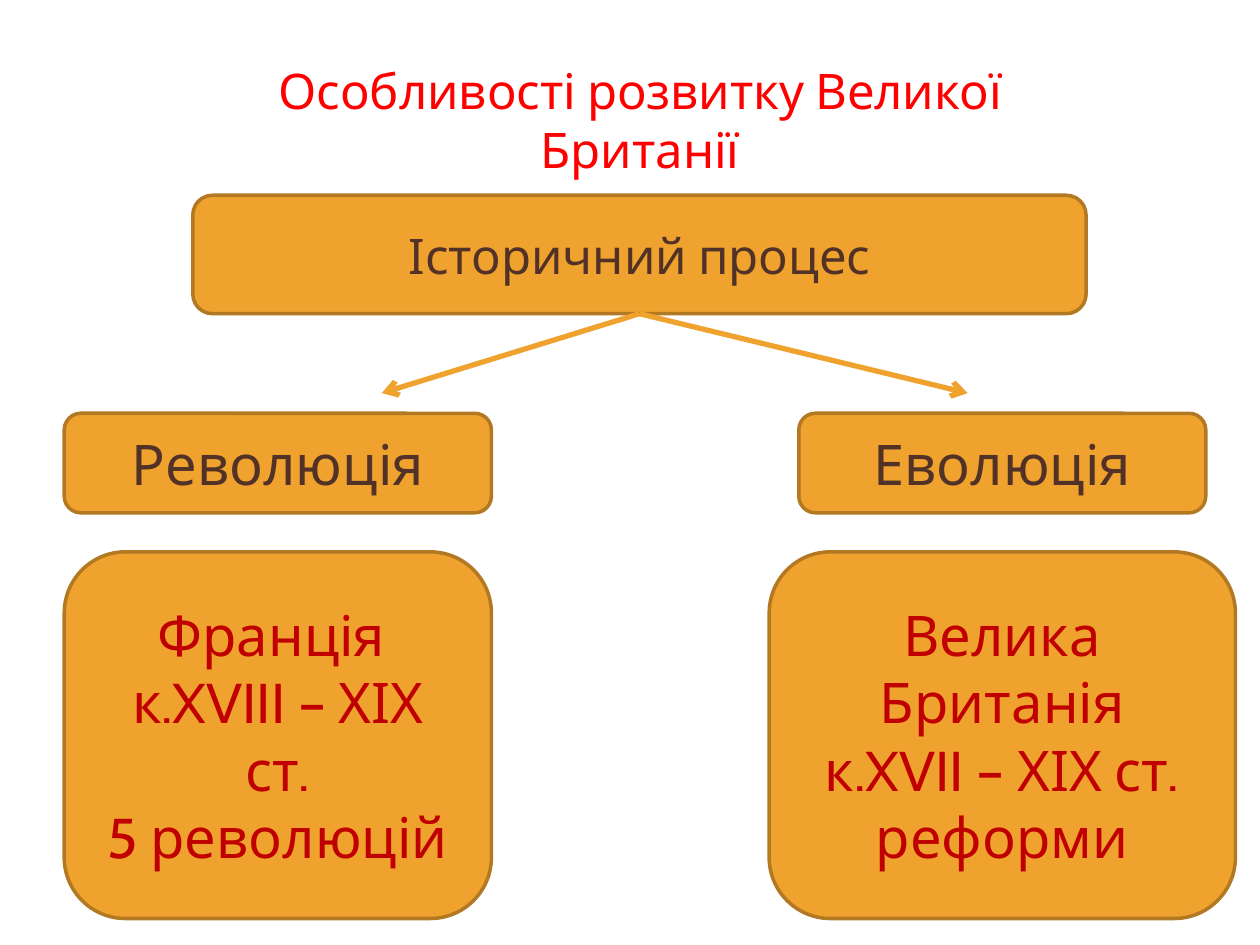
from dataclasses import dataclass

import pptx
import pptx.dml.color
import pptx.enum.shapes
import pptx.enum.text
import pptx.oxml
import pptx.oxml.ns
import pptx.util


@dataclass(frozen=True)
class Theme:
    font: str = "Cabin"
    fill: str = "F0A22E"
    border: str = "B27822"
    title: str = "FF0000"
    label: str = "523227"
    detail: str = "C00000"
    medium: int = 28
    large: int = 32
    border_width: int = 2
    arrow_width: int = 3


def color(value):
    return pptx.dml.color.RGBColor.from_string(value)


def write_text(frame, text, *, font, size, ink, anchor):
    frame.word_wrap = True
    frame.vertical_anchor = anchor
    frame.text = text
    for paragraph in frame.paragraphs:
        paragraph.alignment = pptx.enum.text.PP_ALIGN.CENTER
        for run in paragraph.runs:
            run.font.name = font
            run.font.size = pptx.util.Pt(size)
            run.font.color.rgb = color(ink)


class SlideBuilder:
    columns = 100
    rows = 75

    def __init__(self, presentation, theme):
        self.theme = theme
        self.column = presentation.slide_width / self.columns
        self.row = presentation.slide_height / self.rows
        self.slide = presentation.slides.add_slide(presentation.slide_layouts[6])

    def place(self, *lengths):
        units = (self.column, self.row) * 2
        return [round(length * unit) for length, unit in zip(lengths, units)]

    def title(self, text, area):
        shape = self.slide.shapes.add_textbox(*self.place(*area))
        write_text(shape.text_frame, text, font=self.theme.font,
                   size=self.theme.medium, ink=self.theme.title,
                   anchor=pptx.enum.text.MSO_ANCHOR.TOP)
        shape.text_frame.auto_size = pptx.enum.text.MSO_AUTO_SIZE.SHAPE_TO_FIT_TEXT

    def box(self, text, area, size, ink):
        shape = self.slide.shapes.add_shape(
            pptx.enum.shapes.MSO_SHAPE.ROUNDED_RECTANGLE, *self.place(*area))
        shape.shadow.inherit = False
        shape.fill.solid()
        shape.fill.fore_color.rgb = color(self.theme.fill)
        shape.line.color.rgb = color(self.theme.border)
        shape.line.width = pptx.util.Pt(self.theme.border_width)
        write_text(shape.text_frame, text, font=self.theme.font, size=size, ink=ink,
                   anchor=pptx.enum.text.MSO_ANCHOR.MIDDLE)

    def arrow(self, start, end):
        connector = self.slide.shapes.add_connector(
            pptx.enum.shapes.MSO_CONNECTOR.STRAIGHT, *self.place(*start, *end))
        connector.line.color.rgb = color(self.theme.fill)
        connector.line.width = pptx.util.Pt(self.theme.arrow_width)
        head = pptx.oxml.parse_xml(
            f'<a:tailEnd {pptx.oxml.ns.nsdecls("a")} type="arrow"/>')
        connector.line._get_or_add_ln().append(head)
        effects = pptx.oxml.parse_xml(f'<a:effectLst {pptx.oxml.ns.nsdecls("a")}/>')
        connector._element.spPr.append(effects)


def main():
    presentation = pptx.Presentation()
    presentation.slide_width = pptx.util.Inches(10)
    presentation.slide_height = pptx.util.Inches(7.5)
    theme = Theme()
    builder = SlideBuilder(presentation, theme)

    builder.title("Особливості розвитку Великої Британії", (13, 4.3, 75.6, 5.7))
    left, top, width, height = process_area = (15.3, 15.5, 70.9, 9.4)
    builder.box("Історичний процес", process_area, theme.medium, theme.label)

    branches = [
        ("Революція", "Франція \nк.XVIII – ХІХ ст.\n5 революцій",
         22.05, 33.9, 33.9, 30.3),
        ("Еволюція", "Велика Британія\nк.XVII – ХІХ ст.\nреформи",
         79.55, 32.3, 37, 76.8),
    ]
    for label, detail, center, label_width, detail_width, arrow_end in branches:
        builder.box(label, (center - label_width / 2, 32.8, label_width, 7.9),
                    theme.large, theme.label)
        builder.box(detail, (center - detail_width / 2, 43.8, detail_width, 29.1),
                    theme.large, theme.detail)
        builder.arrow((left + width / 2, top + height), (arrow_end, 31.2))

    presentation.save("out.pptx")


if __name__ == "__main__":
    main()
